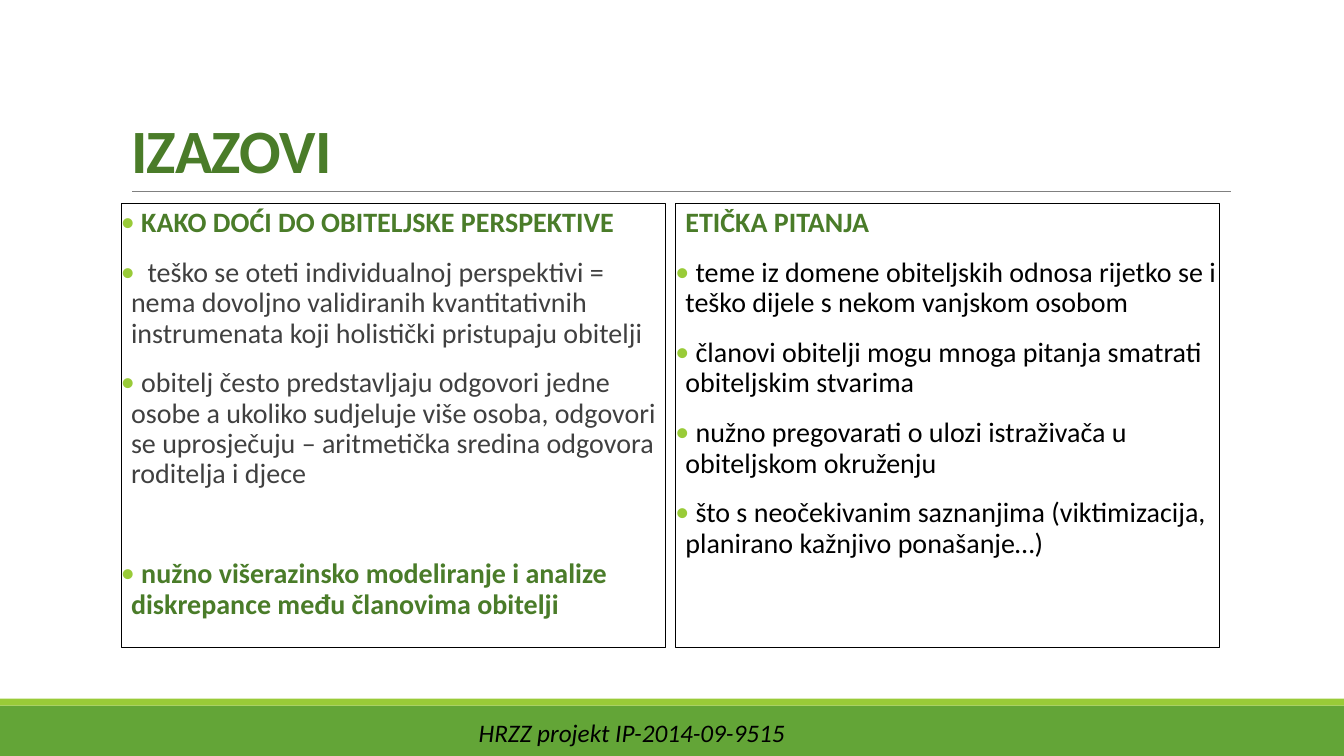
from lxml.etree import SubElement
from pptx import Presentation
from pptx.dml.color import RGBColor
from pptx.enum.shapes import MSO_CONNECTOR as Connector, MSO_SHAPE as Shape
from pptx.enum.text import MSO_ANCHOR as Anchor, MSO_AUTO_SIZE as AutoSize, PP_ALIGN as Align
from pptx.oxml.ns import qn
from pptx.util import Pt

COLORS = {
    "band": "63A537",
    "stripe": "99CB38",
    "accent": "4A7C29",
    "gray": "404040",
    "rule": "808080",
    "black": "000000",
}
FONT = "Calibri"
WIDTH, HEIGHT = 960, 540
BAND_TOP, STRIPE_HEIGHT = 504, 5
COLUMN_LEFT, COLUMN_TOP, COLUMN_WIDTH, COLUMN_HEIGHT = 86.4, 145.4, 388.8, 316.8
COLUMN_STEP = 396
HANGING = 7.2

PERSPECTIVE = [
    (" KAKO DOĆI DO OBITELJSKE PERSPEKTIVE", True, True, 12),
    ("  teško se oteti individualnoj perspektivi = nema dovoljno validiranih "
     "kvantitativnih instrumenata koji holistički pristupaju obitelji", False, True, 12),
    (" obitelj često predstavljaju odgovori jedne osobe a ukoliko sudjeluje više osoba, "
     "odgovori se uprosječuju – aritmetička sredina odgovora roditelja i djece", False, True, 12),
    (" nužno višerazinsko modeliranje i analize diskrepance među članovima obitelji",
     True, True, 48),
]
ETHICS = [
    ("ETIČKA PITANJA", True, False, 12),
    (" teme iz domene obiteljskih odnosa rijetko se i teško dijele s nekom vanjskom osobom",
     False, True, 12),
    (" članovi obitelji mogu mnoga pitanja smatrati obiteljskim stvarima", False, True, 12),
    (" nužno pregovarati o ulozi istraživača u obiteljskom okruženju", False, True, 12),
    (" što s neočekivanim saznanjima (viktimizacija, planirano kažnjivo ponašanje…)",
     False, True, 12),
]


def color(name):
    return RGBColor.from_string(COLORS[name])


def place(shape, left, top, width, height):
    shape.left, shape.top = Pt(left), Pt(top)
    shape.width, shape.height = Pt(width), Pt(height)


def set_font(paragraph, size, color_name, bold=False, italic=False):
    font = paragraph.font
    font.name, font.size = FONT, Pt(size)
    font.bold, font.italic = bold, italic
    font.color.rgb = color(color_name)


def set_bullet(paragraph, visible):
    properties = paragraph._p.get_or_add_pPr()
    properties.set("marL", str(Pt(HANGING)))
    properties.set("indent", str(Pt(-HANGING if visible else 0)))
    if visible:
        bullet_color = SubElement(properties, qn("a:buClr"))
        SubElement(bullet_color, qn("a:srgbClr"), val=COLORS["stripe"])
        SubElement(properties, qn("a:buFont"), typeface=FONT)
        SubElement(properties, qn("a:buChar"), char="•")
    else:
        SubElement(properties, qn("a:buNone"))


def add_bar(slide, left, top, width, height, color_name):
    bar = slide.shapes.add_shape(Shape.RECTANGLE, Pt(left), Pt(top), Pt(width), Pt(height))
    bar.shadow.inherit = False
    bar.fill.solid()
    bar.fill.fore_color.rgb = color(color_name)
    bar.line.fill.background()


def add_title(slide, left, top, width, height):
    title = slide.shapes.title
    place(title, left, top, width, height)
    frame = title.text_frame
    frame.text = "IZAZOVI"
    frame.word_wrap = True
    frame.auto_size = AutoSize.NONE
    frame.vertical_anchor = Anchor.BOTTOM
    paragraph = frame.paragraphs[0]
    paragraph.alignment = Align.LEFT
    paragraph.line_spacing = 0.85
    set_font(paragraph, 44, "accent", bold=True)
    paragraph.runs[0].font._element.set("spc", "-50")

    bottom = top + height
    rule = slide.shapes.add_connector(
        Connector.STRAIGHT, Pt(left + 8), Pt(bottom), Pt(left + width + 1), Pt(bottom))
    rule.line.color.rgb = color("rule")
    rule.line.width = Pt(0.5)
    SubElement(rule._element.spPr, qn("a:effectLst"))


def fill_column(body, left, top, width, height, items, text_color, line_width):
    place(body, left, top, width, height)
    body.line.color.rgb = color("black")
    body.line.width = Pt(line_width)
    frame = body.text_frame
    frame.word_wrap = True
    frame.auto_size = AutoSize.NONE
    frame.vertical_anchor = Anchor.TOP
    frame.margin_left = frame.margin_right = 0
    frame.margin_top = frame.margin_bottom = Pt(3.6)
    frame.text = "\n".join(item[0] for item in items)
    for paragraph, (_, strong, bulleted, space_before) in zip(frame.paragraphs, items):
        paragraph.alignment = Align.LEFT
        paragraph.line_spacing = 0.9
        paragraph.space_before = Pt(space_before)
        paragraph.space_after = Pt(2)
        set_bullet(paragraph, bulleted)
        set_font(paragraph, 20, "accent" if strong else text_color, bold=strong)


def add_footer(slide, left, top, width, height):
    add_bar(slide, left, top, width, height, "band")
    add_bar(slide, left, top - STRIPE_HEIGHT, width, STRIPE_HEIGHT, "stripe")
    project = slide.shapes.add_textbox(Pt(left + 334.8), Pt(top + 5), Pt(480), Pt(29))
    frame = project.text_frame
    frame.word_wrap = True
    frame.text = "HRZZ projekt IP-2014-09-9515"
    set_font(frame.paragraphs[0], 18, "black", italic=True)


def add_challenges_slide(presentation):
    slide = presentation.slides.add_slide(presentation.slide_layouts[3])
    add_footer(slide, 0, BAND_TOP, WIDTH, HEIGHT - BAND_TOP)
    add_title(slide, COLUMN_LEFT, 22.3, 792, 114.5)
    columns = [(PERSPECTIVE, "gray", 0.5), (ETHICS, "black", 0.75)]
    for index, (items, text_color, line_width) in enumerate(columns):
        fill_column(slide.placeholders[index + 1], COLUMN_LEFT + index * COLUMN_STEP, COLUMN_TOP,
                    COLUMN_WIDTH, COLUMN_HEIGHT, items, text_color, line_width)


def main():
    presentation = Presentation()
    presentation.slide_width, presentation.slide_height = Pt(WIDTH), Pt(HEIGHT)
    add_challenges_slide(presentation)
    presentation.save("out.pptx")


if __name__ == "__main__":
    main()
